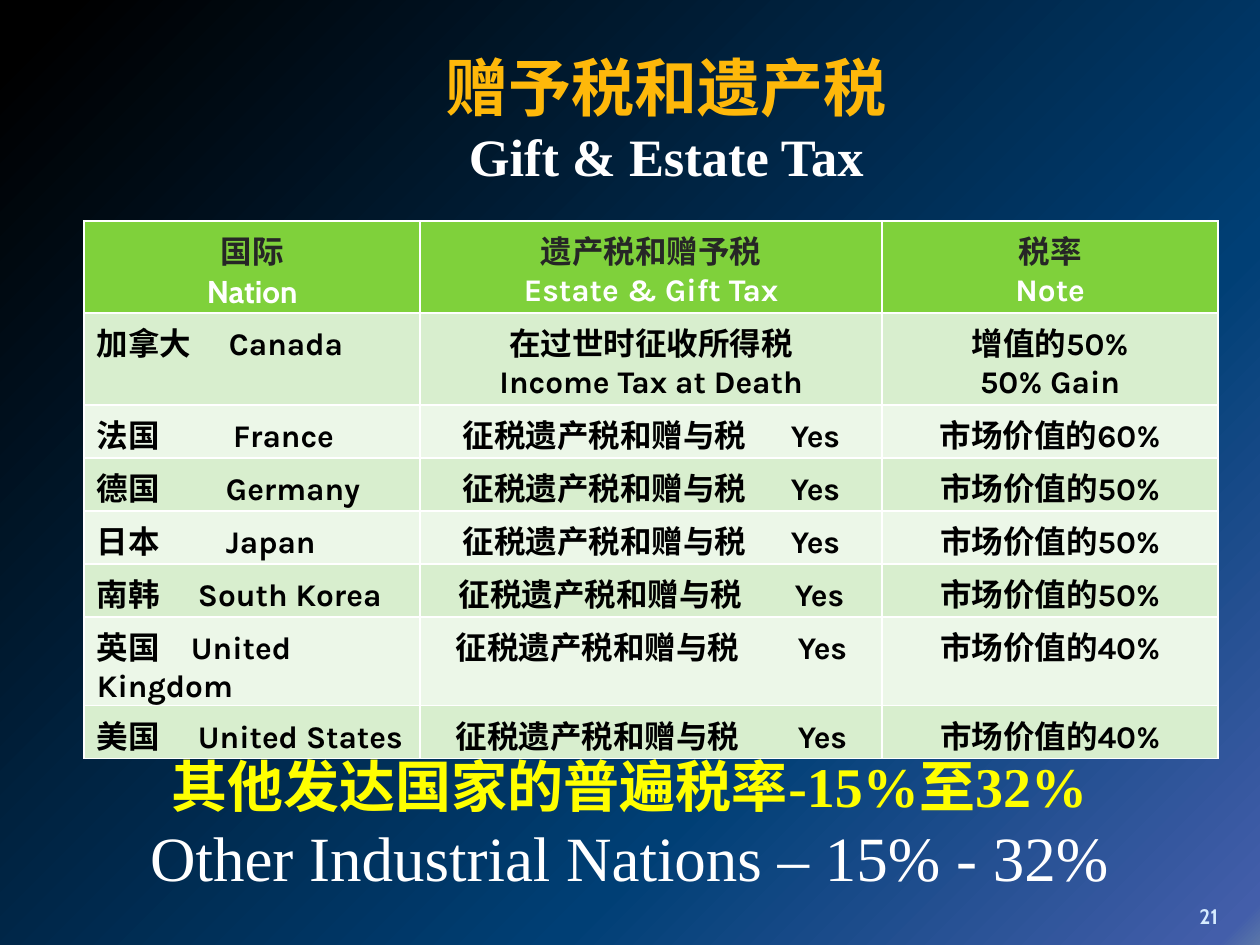
from lxml import etree
from pptx import Presentation
from pptx.dml.color import RGBColor
from pptx.enum.text import MSO_ANCHOR, MSO_AUTO_SIZE, PP_ALIGN
from pptx.oxml.ns import qn
from pptx.util import Emu, Pt

LEFT, CENTER = PP_ALIGN.LEFT, PP_ALIGN.CENTER
TOP, BOTTOM = MSO_ANCHOR.TOP, MSO_ANCHOR.BOTTOM
NO_FIT, GROW = MSO_AUTO_SIZE.NONE, MSO_AUTO_SIZE.SHAPE_TO_FIT_TEXT
PX = 914400 // 126
CELL_INSET = 13
CABIN, KARLA, TIMES = "Cabin", "Karla", "Times New Roman"
COLORS = {
    "white": "FFFFFF", "black": "000000", "charcoal": "262626",
    "green": "7FD13B", "band": "D8EECE", "pale": "ECF7E8",
    "gold": "FEB80A", "yellow": "FFFF00", "ice": "D6ECFF",
}
GRADIENT = [(3, "000000"), (68, "003F75"), (98, "435EAA"), (100, "5B77A8")]

HEADERS = [
    ("国际", CABIN, "Nation", CABIN),
    ("遗产税和赠予税", KARLA, "Estate & Gift Tax", KARLA),
    ("税率", CABIN, "Note", KARLA),
]
TAXED = "征税遗产税和赠与税\tYes"
NATIONS = [
    ("法国\tFrance", 136, 43, 60),
    ("德国\tGermany", 129, 43, 50),
    ("日本\tJapan", 129, 43, 50),
    ("南韩\tSouth Korea", 101, 39, 50),
    ("英国\tUnited Kingdom", 94, 36, 40),
    ("美国\tUnited States", 101, 36, 40),
]
COLUMNS = [336, 462, 336]
ROWS = [92, 92] + [53] * len(NATIONS)


def px(length):
    return Emu(length * PX)


def write(para, text, font=KARLA, size=18, color="black", bold=True, align=CENTER, tab=None):
    para.alignment = align
    if tab:
        stops = etree.SubElement(para._p.get_or_add_pPr(), qn("a:tabLst"))
        etree.SubElement(stops, qn("a:tab"), pos=str(px(tab)), algn="l")
    span = para.add_run()
    span.text = text
    span.font.name = font
    span.font.size = Pt(size)
    span.font.bold = bold
    span.font.color.rgb = RGBColor.from_string(COLORS[color])


class Slide:
    def __init__(self, deck):
        self.page = deck.slides.add_slide(deck.slide_layouts[6])

    def background(self, stops):
        fill = self.page.background.fill
        fill.gradient()
        fill.gradient_angle = 315
        stop_list = self.page._element.find(".//" + qn("a:gsLst"))
        for old in list(stop_list):
            stop_list.remove(old)
        for position, color in stops:
            stop = etree.SubElement(stop_list, qn("a:gs"), pos=str(position * 1000))
            etree.SubElement(stop, qn("a:srgbClr"), val=color)

    def text(self, left, top, width, height, lines, anchor=TOP, fit=NO_FIT):
        box = self.page.shapes.add_textbox(px(left), px(top), px(width), px(height))
        frame = box.text_frame
        frame.word_wrap = True
        frame.auto_size = fit
        frame.vertical_anchor = anchor
        self.fill_frame(frame, lines)

    def fill_frame(self, frame, lines):
        for index, (text, style) in enumerate(lines):
            para = frame.add_paragraph() if index else frame.paragraphs[0]
            write(para, text, **style)

    def table(self, left, top, columns, rows):
        frame = self.page.shapes.add_table(
            len(rows), len(columns), px(left), px(top), px(sum(columns)), px(sum(rows)))
        table = frame.table
        for column, width in zip(table.columns, columns):
            column.width = px(width)
        for row, height in zip(table.rows, rows):
            row.height = px(height)
        return table

    def cell(self, cell, lines, color, inset=CELL_INSET):
        properties = cell._tc.get_or_add_tcPr()
        for side in "LRTB":
            line = etree.SubElement(properties, qn("a:ln" + side), w=str(Pt(1)))
            solid = etree.SubElement(line, qn("a:solidFill"))
            etree.SubElement(solid, qn("a:srgbClr"), val=COLORS["white"])
        cell.fill.solid()
        cell.fill.fore_color.rgb = RGBColor.from_string(COLORS[color])
        cell.margin_left = px(inset)
        cell.margin_bottom = px(0)
        self.fill_frame(cell.text_frame, lines)


def add_tax_table(slide):
    table = slide.table(84, 221, COLUMNS, ROWS)
    for column, (chinese, chinese_font, english, english_font) in enumerate(HEADERS):
        slide.cell(table.cell(0, column), [
            (chinese, dict(font=chinese_font, color="charcoal")),
            (english, dict(font=english_font, color="white")),
        ], "green")

    canada = [
        [("加拿大\tCanada", dict(align=LEFT, tab=132))],
        [("在过世时征收所得税", {}), ("Income Tax at Death", {})],
        [("增值的50%", {}), ("50% Gain", {})],
    ]
    for column, lines in enumerate(canada):
        slide.cell(table.cell(1, column), lines, "band")

    for row, (nation, name_tab, inset, rate) in enumerate(NATIONS, start=2):
        color = "band" if row % 2 else "pale"
        yes_tab = 414 - 2 * inset
        slide.cell(table.cell(row, 0), [(nation, dict(align=LEFT, tab=name_tab))], color)
        slide.cell(table.cell(row, 1), [(TAXED, dict(align=LEFT, tab=yes_tab))], color, inset)
        slide.cell(table.cell(row, 2), [(f"市场价值的{rate}%", {})], color)


def main():
    deck = Presentation()
    deck.slide_width, deck.slide_height = px(1260), px(945)
    slide = Slide(deck)
    slide.background(GRADIENT)
    add_tax_table(slide)
    slide.text(115, 745, 1029, 158, [
        ("其他发达国家的普遍税率-15%至32%", dict(font=TIMES, size=32, color="yellow")),
        ("Other Industrial Nations – 15% - 32%",
         dict(font=TIMES, size=36, color="white", bold=False)),
    ], fit=GROW)
    slide.text(169, 42, 995, 152, [
        ("赠予税和遗产税", dict(font=TIMES, size=36, color="gold")),
        ("Gift & Estate Tax", dict(font=TIMES, size=30, color="white")),
    ])
    slide.text(1187, 885, 63, 50, [
        ("21", dict(font=CABIN, size=12, color="ice", align=LEFT)),
    ], anchor=BOTTOM)
    deck.save("out.pptx")


if __name__ == "__main__":
    main()
